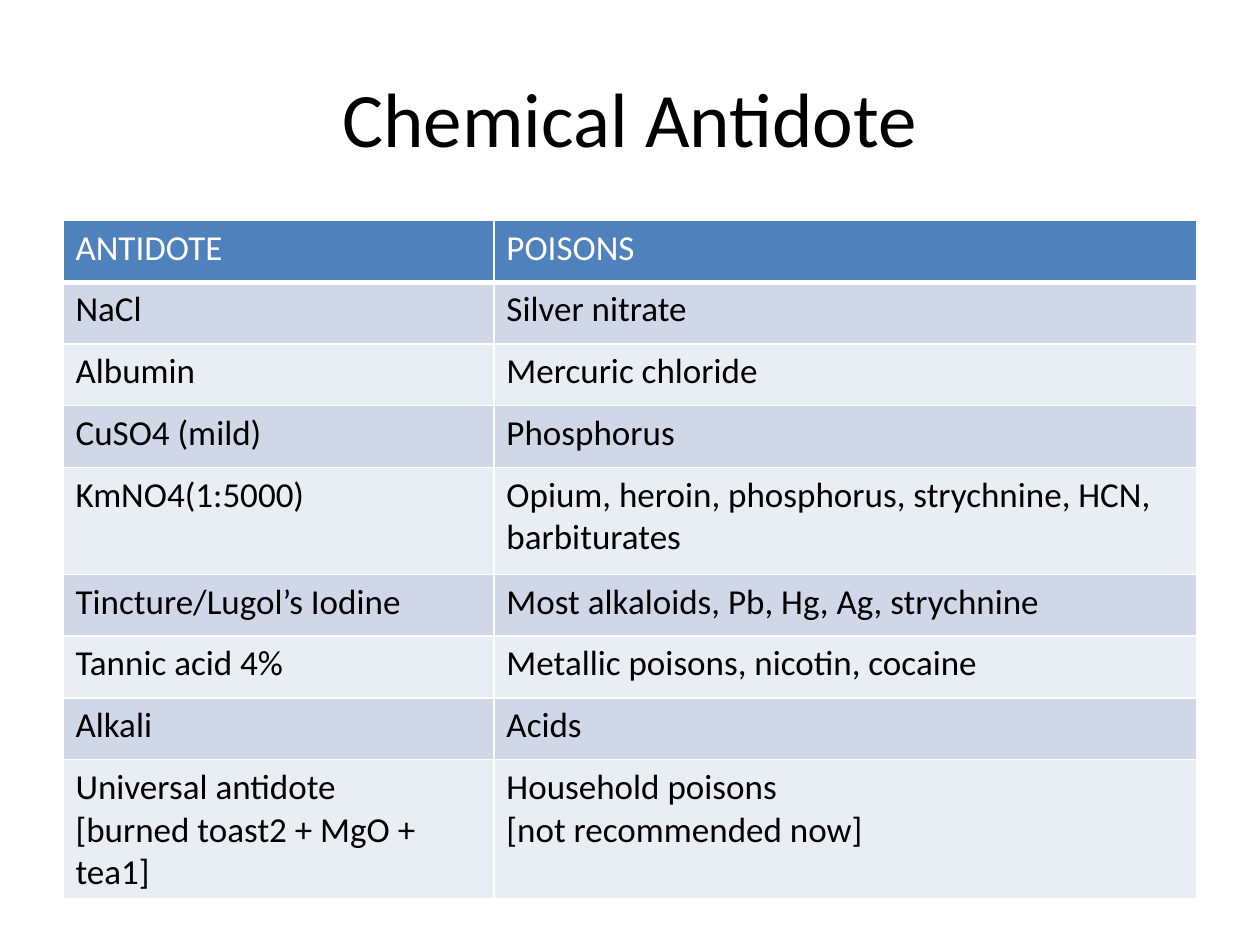
from typing import NamedTuple

from lxml.etree import SubElement
from pptx import Presentation
from pptx.dml.color import RGBColor
from pptx.enum.text import MSO_ANCHOR, PP_ALIGN
from pptx.oxml.ns import qn
from pptx.util import Inches, Pt

FONT = "Calibri"
WHITE, BLACK = "FFFFFF", "000000"
HEADER_FILL = "4F81BD"
BAND_FILLS = ("E9EDF4", "D0D8E8")
COLUMN_WIDTHS = (3.42, 5.58)
ROW_HEIGHT, TALL_ROW_HEIGHT = 0.49, 0.85


class Treatment(NamedTuple):
    antidote: str
    poisons: str
    height: float = ROW_HEIGHT


TREATMENTS = (
    Treatment("ANTIDOTE", "POISONS"),
    Treatment("NaCl", "Silver nitrate"),
    Treatment("Albumin", "Mercuric chloride"),
    Treatment("CuSO4 (mild)", "Phosphorus"),
    Treatment("KmNO4(1:5000)",
              "Opium, heroin, phosphorus, strychnine, HCN, barbiturates",
              TALL_ROW_HEIGHT),
    Treatment("Tincture/Lugol’s Iodine", "Most alkaloids, Pb, Hg, Ag, strychnine"),
    Treatment("Tannic acid 4%", "Metallic poisons, nicotin, cocaine"),
    Treatment("Alkali", "Acids"),
    Treatment("Universal antidote\n[burned toast2 + MgO + tea1]",
              "Household poisons\n[not recommended now]",
              TALL_ROW_HEIGHT),
)


def rgb(color: str) -> RGBColor:
    return RGBColor.from_string(color)


def format_text(text_frame, size: float, color: str) -> None:
    for paragraph in text_frame.paragraphs:
        for run in paragraph.runs:
            run.font.name = FONT
            run.font.size = Pt(size)
            run.font.bold = False
            run.font.color.rgb = rgb(color)


def add_borders(cell, bottom_width: float) -> None:
    """Draw white cell borders; only the bottom one varies in width."""
    properties = cell._tc.get_or_add_tcPr()
    widths = {"a:lnL": 1, "a:lnR": 1, "a:lnT": 1, "a:lnB": bottom_width}
    for tag, width in widths.items():
        line = SubElement(properties, qn(tag), w=str(Pt(width)))
        fill = SubElement(line, qn("a:solidFill"))
        SubElement(fill, qn("a:srgbClr"), val=WHITE)


def add_title(slide, text: str) -> None:
    box = slide.shapes.add_textbox(Inches(0.5), Inches(0.3), Inches(9), Inches(1.25))
    text_frame = box.text_frame
    text_frame.word_wrap = True
    text_frame.vertical_anchor = MSO_ANCHOR.MIDDLE
    text_frame.text = text
    text_frame.paragraphs[0].alignment = PP_ALIGN.CENTER
    format_text(text_frame, 44, BLACK)


def add_antidote_table(slide, treatments: tuple[Treatment, ...]) -> None:
    total_height = sum(treatment.height for treatment in treatments)
    table = slide.shapes.add_table(
        len(treatments), len(COLUMN_WIDTHS), Inches(0.5), Inches(1.75),
        Inches(sum(COLUMN_WIDTHS)), Inches(total_height)).table
    for column, width in zip(table.columns, COLUMN_WIDTHS):
        column.width = Inches(width)
    for index, (row, treatment) in enumerate(zip(table.rows, treatments)):
        is_header = index == 0
        row.height = Inches(treatment.height)
        for cell, text in zip(row.cells, (treatment.antidote, treatment.poisons)):
            cell.text_frame.text = text
            format_text(cell.text_frame, 20, WHITE if is_header else BLACK)
            add_borders(cell, 3 if is_header else 1)
            cell.fill.solid()
            cell.fill.fore_color.rgb = rgb(
                HEADER_FILL if is_header else BAND_FILLS[index % 2])


def main() -> None:
    presentation = Presentation()
    presentation.slide_width = Inches(10)
    presentation.slide_height = Inches(7.5)
    slide = presentation.slides.add_slide(presentation.slide_layouts[6])
    add_title(slide, "Chemical Antidote")
    add_antidote_table(slide, TREATMENTS)
    presentation.save("out.pptx")


if __name__ == "__main__":
    main()
